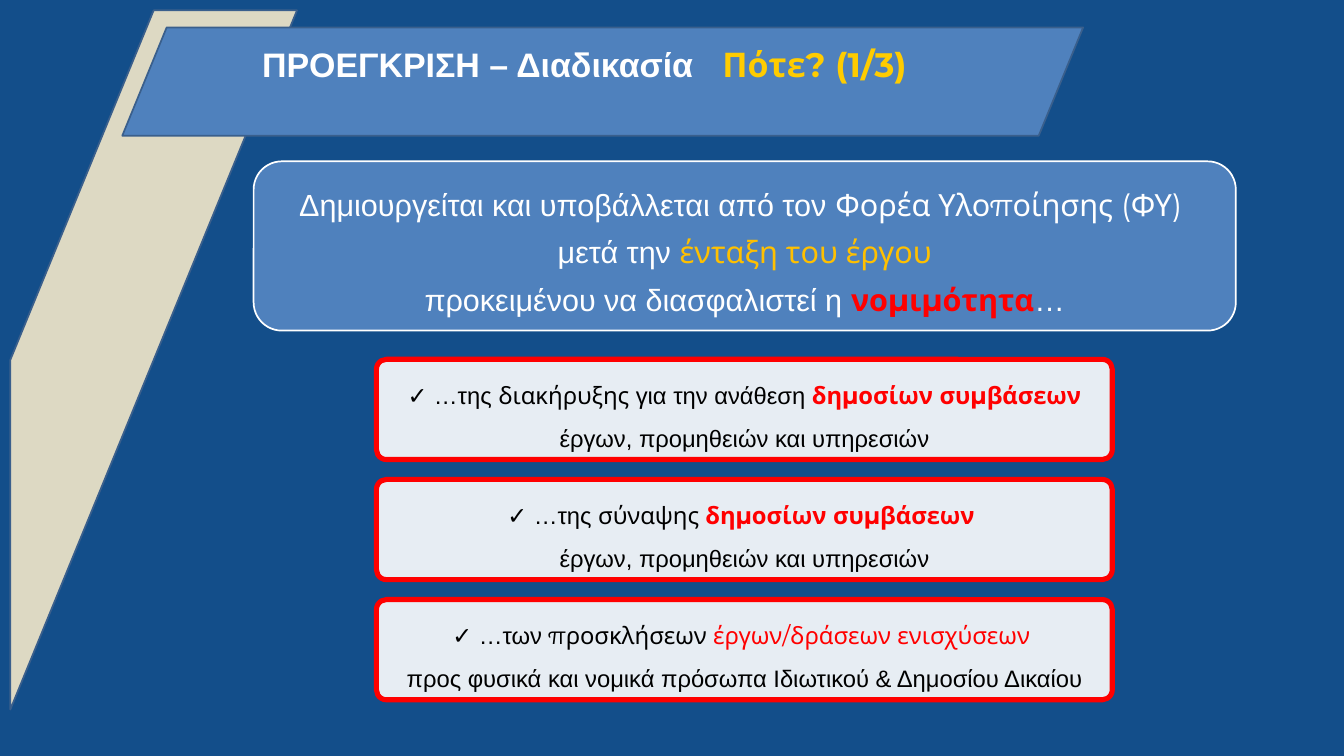
from dataclasses import dataclass

from lxml.etree import SubElement
from pptx import Presentation
from pptx.dml.color import RGBColor
from pptx.enum.shapes import MSO_SHAPE as Preset
from pptx.enum.text import MSO_ANCHOR as Anchor, MSO_AUTO_SIZE as AutoSize, PP_ALIGN as Align
from pptx.oxml import parse_xml
from pptx.oxml.ns import nsdecls, qn
from pptx.util import Inches, Length, Pt

WIDTH, HEIGHT = Inches(21.99), Inches(12.37)


@dataclass(frozen=True)
class Theme:
    navy: str = "134E8A"
    blue: str = "4F81BD"
    outline: str = "3A5F8C"
    sand: str = "DDD9C3"
    white: str = "FFFFFF"
    black: str = "000000"
    red: str = "FF0000"
    amber: str = "FFC000"
    yellow: str = "FFCC00"
    plain: str = "Arial"
    accent: str = "Montserrat"
    title_size: int = 40
    lead_size: int = 36
    card_size: int = 28


THEME = Theme()


@dataclass(frozen=True)
class Area:
    """A place on the slide, in percent of its width and height."""
    left: float
    top: float
    width: float
    height: float

    def lengths(self) -> tuple[Length, ...]:
        return (across(self.left), down(self.top), across(self.width), down(self.height))


@dataclass(frozen=True)
class Span:
    text: str
    color: str
    font: str = THEME.plain
    bold: bool = False


@dataclass(frozen=True)
class Panel:
    preset: Preset
    area: Area
    fill: str
    line: str
    weight: float = 2
    corner: float | None = None
    opacity: int = 100


Lines = list[list[Span]]


def across(percent: float) -> Length:
    return Length(round(WIDTH * percent / 100))


def down(percent: float) -> Length:
    return Length(round(HEIGHT * percent / 100))


def rgb(color: str) -> RGBColor:
    return RGBColor.from_string(color)


def draw_panel(page, panel: Panel):
    box = page.shapes.add_shape(panel.preset, *panel.area.lengths())
    box.shadow.inherit = False
    box.fill.solid()
    box.fill.fore_color.rgb = rgb(panel.fill)
    box.line.color.rgb = rgb(panel.line)
    box.line.width = Pt(panel.weight)
    if panel.corner is not None:
        box.adjustments[0] = panel.corner
    if panel.opacity < 100:
        color = box._element.spPr.find(qn("a:solidFill"))[0]
        SubElement(color, qn("a:alpha"), val=str(panel.opacity * 1000))
    return box


def add_text_shadow(span) -> None:
    effect = parse_xml(
        f'<a:effectLst {nsdecls("a")}><a:outerShdw blurRad="38100" dist="38100" dir="2700000">'
        '<a:srgbClr val="000000"><a:alpha val="43000"/></a:srgbClr></a:outerShdw></a:effectLst>')
    span.font._element.find(qn("a:solidFill")).addnext(effect)


def write_lines(box, lines: Lines, size: int, align: Align, spacing: float,
                shadow: bool = False) -> None:
    frame = box.text_frame
    frame.word_wrap = True
    for number, line in enumerate(lines):
        para = frame.add_paragraph() if number else frame.paragraphs[0]
        para.alignment = align
        para.line_spacing = spacing
        for item in line:
            span = para.add_run()
            span.text = item.text
            span.font.size = Pt(size)
            span.font.name = item.font
            span.font.bold = item.bold
            span.font.color.rgb = rgb(item.color)
            if shadow:
                add_text_shadow(span)


def write_title(page, area: Area, spans: list[Span], tab: float) -> None:
    title = page.shapes.title
    title.left, title.top, title.width, title.height = area.lengths()
    title.text_frame.auto_size = AutoSize.NONE
    title.text_frame.vertical_anchor = Anchor.TOP
    write_lines(title, [spans], THEME.title_size, Align.LEFT, 1.0)
    properties = title.text_frame.paragraphs[0]._p.get_or_add_pPr()
    stops = SubElement(properties, qn("a:tabLst"))
    SubElement(stops, qn("a:tab"), pos=str(across(tab)), algn="l")
    # The title lies in front of its banner
    title._element.getparent().append(title._element)


# Decoration and the lead panel
STRIPE = Panel(Preset.DIAGONAL_STRIPE, Area(0.77, 1.37, 21.33, 92.48), THEME.sand, THEME.outline)
BANNER = Panel(Preset.PARALLELOGRAM, Area(9.1, 3.64, 71.49, 14.31), THEME.blue, THEME.outline,
               corner=0.41)
LEAD = Panel(Preset.ROUNDED_RECTANGLE, Area(18.87, 21.34, 73.08, 22.39), THEME.blue, THEME.white)

TITLE_AREA = Area(19.05, 5.42, 53.02, 6.22)
TITLE_TAB = 34.25
TITLE = [
    Span("ΠΡΟΕΓΚΡΙΣΗ – Διαδικασία\t", THEME.white, bold=True),
    Span("Πότε? (1/3)", THEME.yellow, THEME.accent, True),
]

LEAD_LINES: Lines = [
    [Span("Δημιουργείται και υποβάλλεται από τον ", THEME.white),
     Span("Φορέα Υλοποίησης (ΦΥ) ", THEME.white, THEME.accent)],
    [Span("μετά την ", THEME.white),
     Span("ένταξη του έργου", THEME.amber, THEME.accent)],
    [Span("προκειμένου να διασφαλιστεί η ", THEME.white),
     Span("νομιμότητα", THEME.red, THEME.accent, True),
     Span("…", THEME.white)],
]

# Cards, stacked at an equal step
CARD_LEFT, CARD_TOP, CARD_WIDTH, CARD_HEIGHT, CARD_STEP = 28.01, 47.53, 54.75, 13.26, 15.89
CONTRACTS = Span("δημοσίων συμβάσεων ", THEME.red, THEME.accent, True)
CONTRACT_KINDS = Span("έργων, προμηθειών και υπηρεσιών", THEME.black)
CARDS: list[Lines] = [
    [[Span("✓ …της ", THEME.black),
      Span("διακήρυξης", THEME.black, THEME.accent),
      Span(" για την ανάθεση ", THEME.black),
      CONTRACTS, CONTRACT_KINDS]],
    [[Span("✓ …της ", THEME.black),
      Span("σύναψης ", THEME.black, THEME.accent),
      CONTRACTS],
     [CONTRACT_KINDS]],
    [[Span("✓ …των ", THEME.black),
      Span("προσκλήσεων ", THEME.black, THEME.accent),
      Span("έργων/δράσεων ενισχύσεων ", THEME.red, THEME.accent)],
     [Span("προς φυσικά και νομικά πρόσωπα Ιδιωτικού & Δημοσίου Δικαίου", THEME.black)]],
]


def main() -> None:
    deck = Presentation()
    deck.slide_width, deck.slide_height = WIDTH, HEIGHT
    page = deck.slides.add_slide(deck.slide_layouts[5])
    page.background.fill.solid()
    page.background.fill.fore_color.rgb = rgb(THEME.navy)

    # Heading
    draw_panel(page, STRIPE)
    draw_panel(page, BANNER)
    write_title(page, TITLE_AREA, TITLE, TITLE_TAB)

    # Lead statement
    lead = draw_panel(page, LEAD)
    write_lines(lead, LEAD_LINES, THEME.lead_size, Align.CENTER, 1.3, shadow=True)

    # Cards
    for row, lines in enumerate(CARDS):
        area = Area(CARD_LEFT, CARD_TOP + row * CARD_STEP, CARD_WIDTH, CARD_HEIGHT)
        card = draw_panel(page, Panel(Preset.ROUNDED_RECTANGLE, area, THEME.white, THEME.red,
                                      weight=6, corner=0.1, opacity=90))
        write_lines(card, lines, THEME.card_size, Align.CENTER, 1.5)

    deck.save("out.pptx")


if __name__ == "__main__":
    main()
